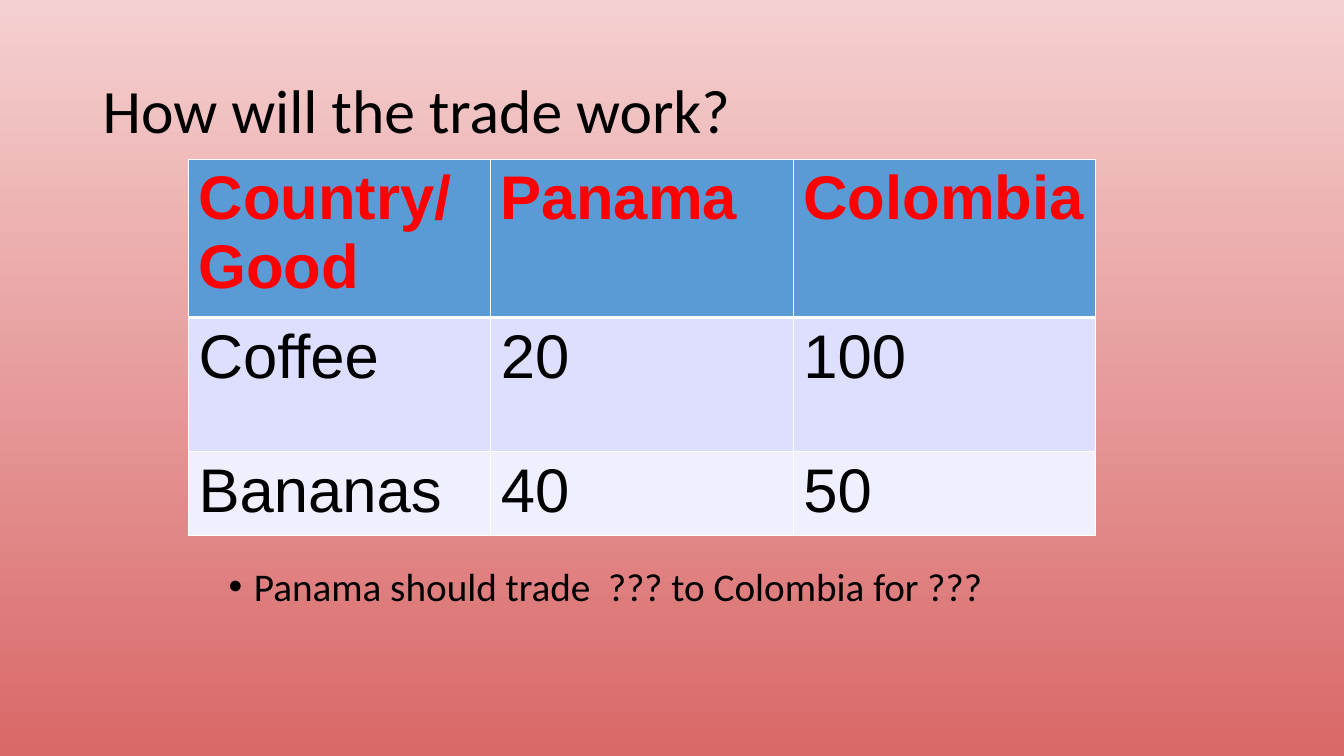
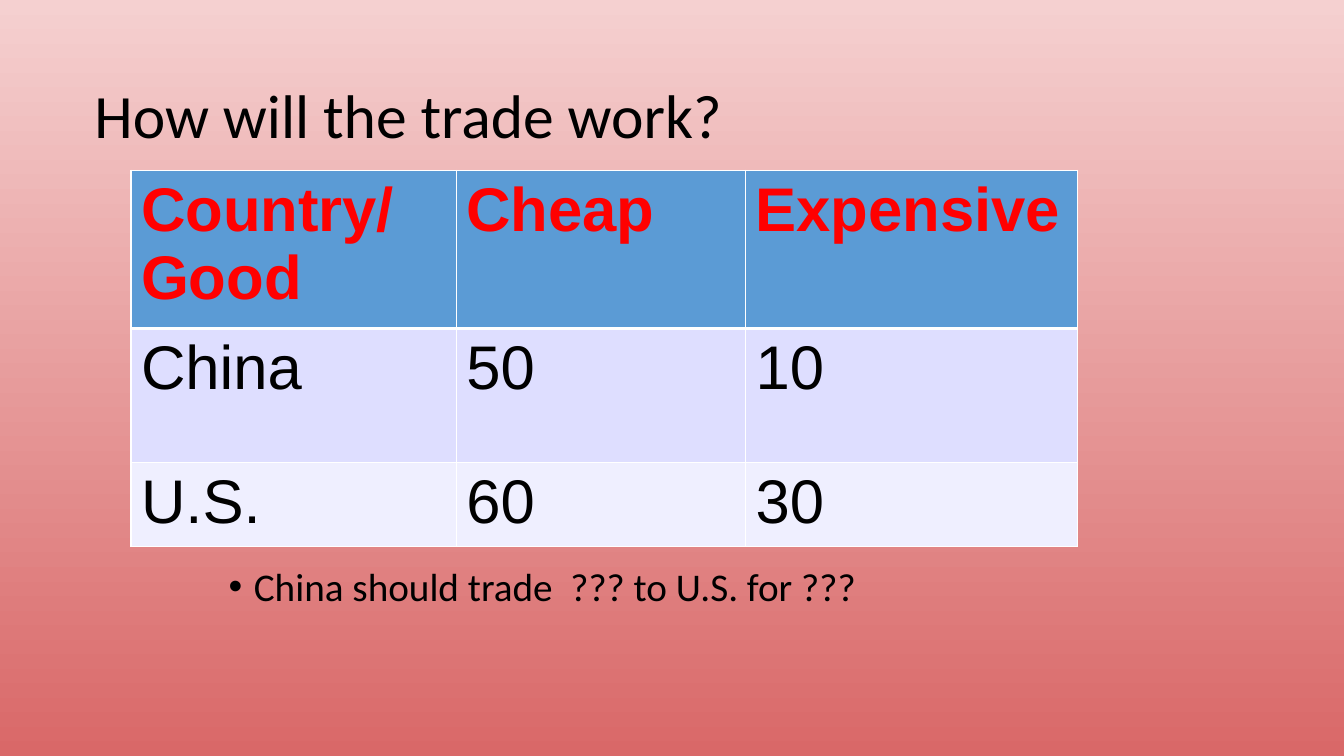
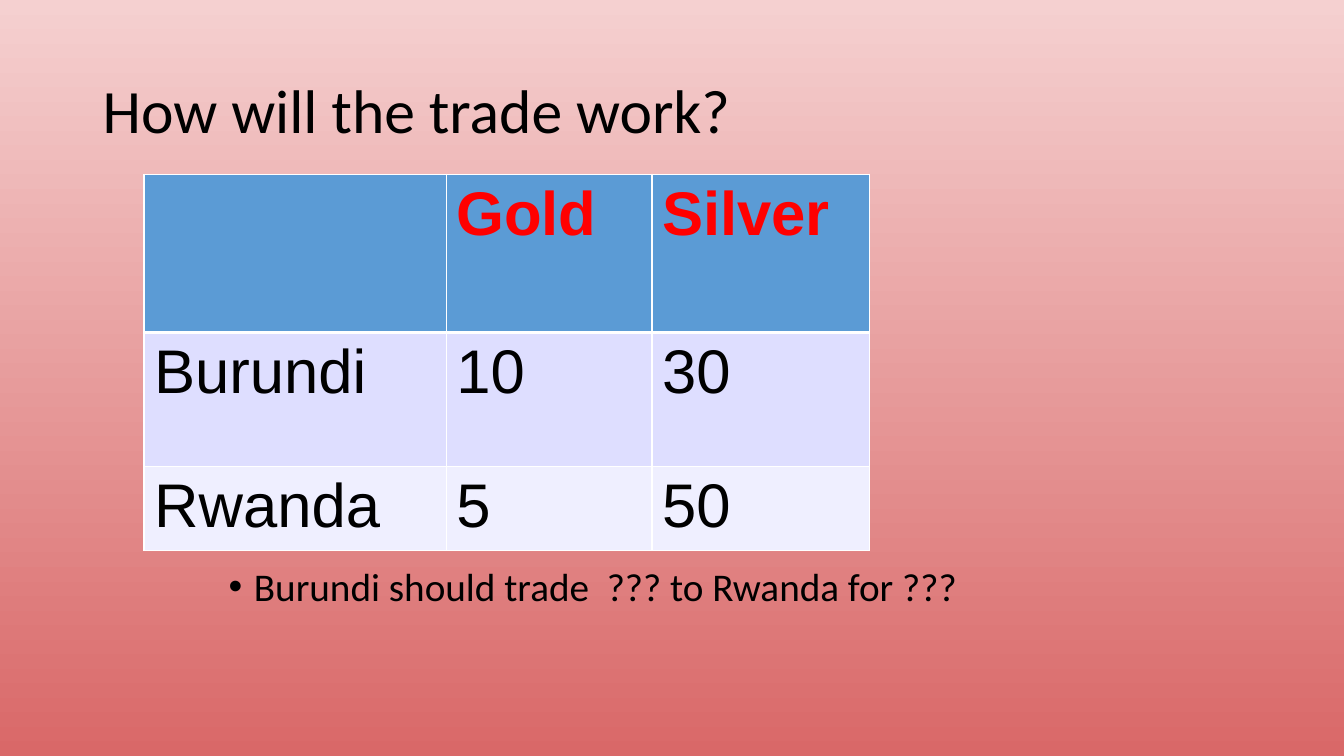
from dataclasses import dataclass
from typing import NamedTuple

from lxml import etree
from pptx import Presentation
from pptx import util as u
from pptx.dml import color
from pptx.enum import text
from pptx.oxml import ns


# Shared look
@dataclass(frozen=True)
class Theme:
    background_top: str = "F5D0D0"
    background_bottom: str = "D96868"
    ink: str = "000000"
    header_ink: str = "FF0000"
    header_fill: str = "5B9BD5"
    row_fills: tuple[str, ...] = ("DEDEFF", "EFEFFF")
    border: str = "FFFFFF"
    text_font: str = "Calibri"
    table_font: str = "Arial"
    title_size: int = 44
    table_size: int = 44
    bullet_size: int = 28
    thin_line: int = 1
    thick_line: int = 3


THEME = Theme()
TITLE = "How will the trade work?"
TITLE_SIZE = (29.21, 3.68)
BULLET_BOX = (5.51, 14.17, 22.86, 2.11)
BULLET_INDENT = 0.64
ROW_HEIGHTS = (3.99, 3.38, 2.11)


class TradeSlide(NamedTuple):
    title_at: tuple[float, float]
    table_at: tuple[float, float]
    columns: tuple[float, ...]
    rows: tuple[tuple[str, ...], ...]
    question: str


SLIDES = (
    TradeSlide((2.34, 1.02), (4.75, 4.01), (7.62, 7.62, 7.62),
               (("Country/Good", "Panama", "Colombia"),
                ("Coffee", "20", "100"),
                ("Bananas", "40", "50")),
               "Panama should trade  ??? to Colombia for ???"),
    TradeSlide((2.13, 1.14), (3.3, 4.29), (8.2, 7.29, 8.36),
               (("Country/ Good", "Cheap", "Expensive"),
                ("China", "50", "10"),
                ("U.S.", "60", "30")),
               "China should trade  ??? to U.S. for ???"),
    TradeSlide((2.34, 1.02), (3.63, 4.39), (7.62, 5.18, 5.49),
               (("", "Gold", "Silver"),
                ("Burundi", "10", "30"),
                ("Rwanda", "5", "50")),
               "Burundi should trade  ??? to Rwanda for ???"),
)


# Text
def add_span(para, words: str, size: int, font: str, ink: str, bold: bool = False) -> None:
    span = para.add_run()
    span.text = words
    span.font.size = u.Pt(size)
    span.font.name = font
    span.font.bold = bold
    span.font.color.rgb = color.RGBColor.from_string(ink)


def add_box(page, area: tuple[float, ...], anchor):
    box = page.shapes.add_textbox(*(u.Cm(length) for length in area))
    frame = box.text_frame
    frame.word_wrap = True
    frame.vertical_anchor = anchor
    para = frame.paragraphs[0]
    para.line_spacing = 0.9
    return para


def add_title(page, at: tuple[float, float]) -> None:
    para = add_box(page, at + TITLE_SIZE, text.MSO_ANCHOR.MIDDLE)
    add_span(para, TITLE, THEME.title_size, THEME.text_font, THEME.ink)


def add_question(page, question: str) -> None:
    para = add_box(page, BULLET_BOX, text.MSO_ANCHOR.TOP)
    properties = para._p.get_or_add_pPr()
    properties.set("marL", str(u.Cm(BULLET_INDENT)))
    properties.set("indent", str(-u.Cm(BULLET_INDENT)))
    etree.SubElement(properties, ns.qn("a:buFont"), typeface="Arial")
    etree.SubElement(properties, ns.qn("a:buChar"), char="•")
    add_span(para, question, THEME.bullet_size, THEME.text_font, THEME.ink)


# Table
def add_borders(cell, top: int, bottom: int) -> None:
    properties = cell._tc.get_or_add_tcPr()
    widths = {"lnL": THEME.thin_line, "lnR": THEME.thin_line, "lnT": top, "lnB": bottom}
    for side, width in widths.items():
        line = etree.SubElement(properties, ns.qn(f"a:{side}"), w=str(u.Pt(width)))
        fill = etree.SubElement(line, ns.qn("a:solidFill"))
        etree.SubElement(fill, ns.qn("a:srgbClr"), val=THEME.border)


def add_trade_table(page, content: TradeSlide) -> None:
    left, top = content.table_at
    table = page.shapes.add_table(
        len(content.rows), len(content.columns), u.Cm(left), u.Cm(top),
        u.Cm(sum(content.columns)), u.Cm(sum(ROW_HEIGHTS))).table
    for column, width in zip(table.columns, content.columns):
        column.width = u.Cm(width)
    fills = (THEME.header_fill, *THEME.row_fills)
    for index, (row, height, words_in_row) in enumerate(
            zip(table.rows, ROW_HEIGHTS, content.rows)):
        row.height = u.Cm(height)
        is_header = index == 0
        for cell, words in zip(row.cells, words_in_row):
            add_borders(cell,
                        top=THEME.thick_line if index == 1 else THEME.thin_line,
                        bottom=THEME.thick_line if is_header else THEME.thin_line)
            cell.fill.solid()
            cell.fill.fore_color.rgb = color.RGBColor.from_string(fills[index])
            if words:
                add_span(cell.text_frame.paragraphs[0], words, THEME.table_size,
                         THEME.table_font,
                         THEME.header_ink if is_header else THEME.ink, is_header)


# Deck
def paint_background(master) -> None:
    fill = master.background.fill
    fill.gradient()
    fill.gradient_angle = 270
    for stop, tone in zip(fill.gradient_stops,
                          (THEME.background_top, THEME.background_bottom)):
        stop.color.rgb = color.RGBColor.from_string(tone)


def main() -> None:
    deck = Presentation()
    deck.slide_width, deck.slide_height = u.Cm(33.87), u.Cm(19.05)
    paint_background(deck.slide_master)
    for content in SLIDES:
        page = deck.slides.add_slide(deck.slide_layouts[6])
        add_title(page, content.title_at)
        add_question(page, content.question)
        add_trade_table(page, content)
    deck.save("out.pptx")


if __name__ == "__main__":
    main()
